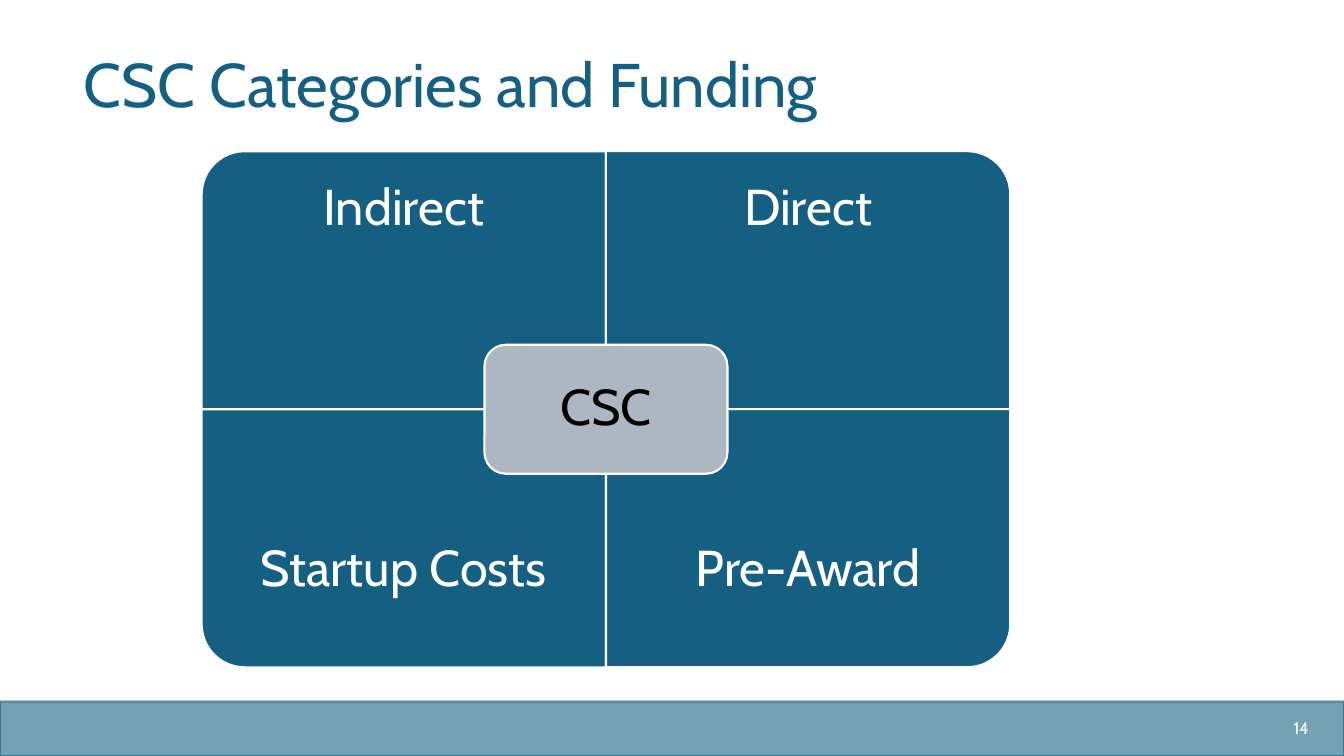
from pptx import Presentation
from pptx.dml.color import RGBColor
from pptx.enum.shapes import MSO_SHAPE
from pptx.enum.text import MSO_ANCHOR, PP_ALIGN
from pptx.oxml.ns import qn
from pptx.util import Inches, Pt
from lxml import etree

TEAL = RGBColor(0x15, 0x60, 0x82)
GREY = RGBColor(0xAC, 0xB7, 0xC1)
WHITE = RGBColor(0xFF, 0xFF, 0xFF)
BLACK = RGBColor(0, 0, 0)
LEFT, CENTER, RIGHT = PP_ALIGN.LEFT, PP_ALIGN.CENTER, PP_ALIGN.RIGHT
MIDDLE = MSO_ANCHOR.MIDDLE
RECTANGLE = MSO_SHAPE.RECTANGLE
ROUNDED = MSO_SHAPE.ROUNDED_RECTANGLE
ONE_ROUND_CORNER = MSO_SHAPE.ROUND_1_RECTANGLE

TITLE = "CSC Categories and Funding"
HUB = "CSC"
PAGE_NUMBER = "14"
# label, column, row, rotation that turns the round corner outwards
CATEGORIES = [
    ("Indirect", 0, 0, 270),
    ("Direct", 1, 0, 0),
    ("Startup Costs", 0, 1, 180),
    ("Pre-Award", 1, 1, 90),
]

SLIDE_W, SLIDE_H = 13.33, 7.5
GRID_LEFT, GRID_TOP = 2, 1.5
TILE_W, TILE_H = 4.01, 2.56
LABEL_H = 1.16
LABEL_CENTERS = (2.08, 5.66)
HUB_W, HUB_H = 2.41, 1.28
BAR_H = 0.54


def write(shape, text, size, color, align, inset=0.1, spacing=0.9):
    frame = shape.text_frame
    margin = Inches(inset)
    frame_format = {
        "word_wrap": True, "vertical_anchor": MIDDLE,
        "margin_left": margin, "margin_right": margin,
        "margin_top": Inches(0.05), "margin_bottom": Inches(0.05),
    }
    for name, value in frame_format.items():
        setattr(frame, name, value)
    para = frame.paragraphs[0]
    para.alignment, para.line_spacing = align, spacing
    span = para.add_run()
    span.text = text
    for name, value in {"name": "Cabin", "size": Pt(size)}.items():
        setattr(span.font, name, value)
    span.font.color.rgb = color


def add_block(page, kind, left, top, width, height, fill, line):
    block = page.shapes.add_shape(
        kind, Inches(left), Inches(top), Inches(width), Inches(height))
    block.shadow.inherit = False
    block.fill.solid()
    block.fill.fore_color.rgb = fill
    block.line.color.rgb = line
    block.line.width = Pt(1.5)
    return block


def add_label(page, left, top, width, height, *text_format):
    box = page.shapes.add_textbox(
        Inches(left), Inches(top), Inches(width), Inches(height))
    write(box, *text_format)


def set_opacity(shape, percent):
    for color in shape._element.spPr.iter(qn("a:srgbClr")):
        etree.SubElement(color, qn("a:alpha"), val=str(percent * 1000))


def main():
    deck = Presentation()
    deck.slide_width, deck.slide_height = Inches(SLIDE_W), Inches(SLIDE_H)
    page = deck.slides.add_slide(deck.slide_layouts[5])

    title = page.shapes.title
    title.left, title.top = Inches(0.73), Inches(0.48)
    title.width, title.height = Inches(10.56), Inches(0.78)
    write(title, TITLE, 44, TEAL, LEFT)

    bar = add_block(page, RECTANGLE, 0, SLIDE_H - BAR_H, SLIDE_W, BAR_H, TEAL, TEAL)
    set_opacity(bar, 59)
    add_label(page, 11.65, 7.02, 1.43, 0.4, PAGE_NUMBER, 12, WHITE, RIGHT, 0.1, 1.0)

    for label, column, row, rotation in CATEGORIES:
        left, top = GRID_LEFT + column * TILE_W, GRID_TOP + row * TILE_H
        # A quarter turn swaps width and height about the same centre.
        width, height = (TILE_H, TILE_W) if rotation % 180 else (TILE_W, TILE_H)
        tile = add_block(
            page, ONE_ROUND_CORNER, left + (TILE_W - width) / 2,
            top + (TILE_H - height) / 2, width, height, TEAL, WHITE)
        tile.rotation = rotation
        add_label(page, left, LABEL_CENTERS[row] - LABEL_H / 2, TILE_W, LABEL_H,
                  label, 36, WHITE, CENTER, 0.28)

    hub = add_block(
        page, ROUNDED, GRID_LEFT + TILE_W - HUB_W / 2,
        GRID_TOP + TILE_H - HUB_H / 2, HUB_W, HUB_H, GREY, WHITE)
    write(hub, HUB, 36, BLACK, CENTER, 0.15)

    deck.save("out.pptx")


if __name__ == "__main__":
    main()
